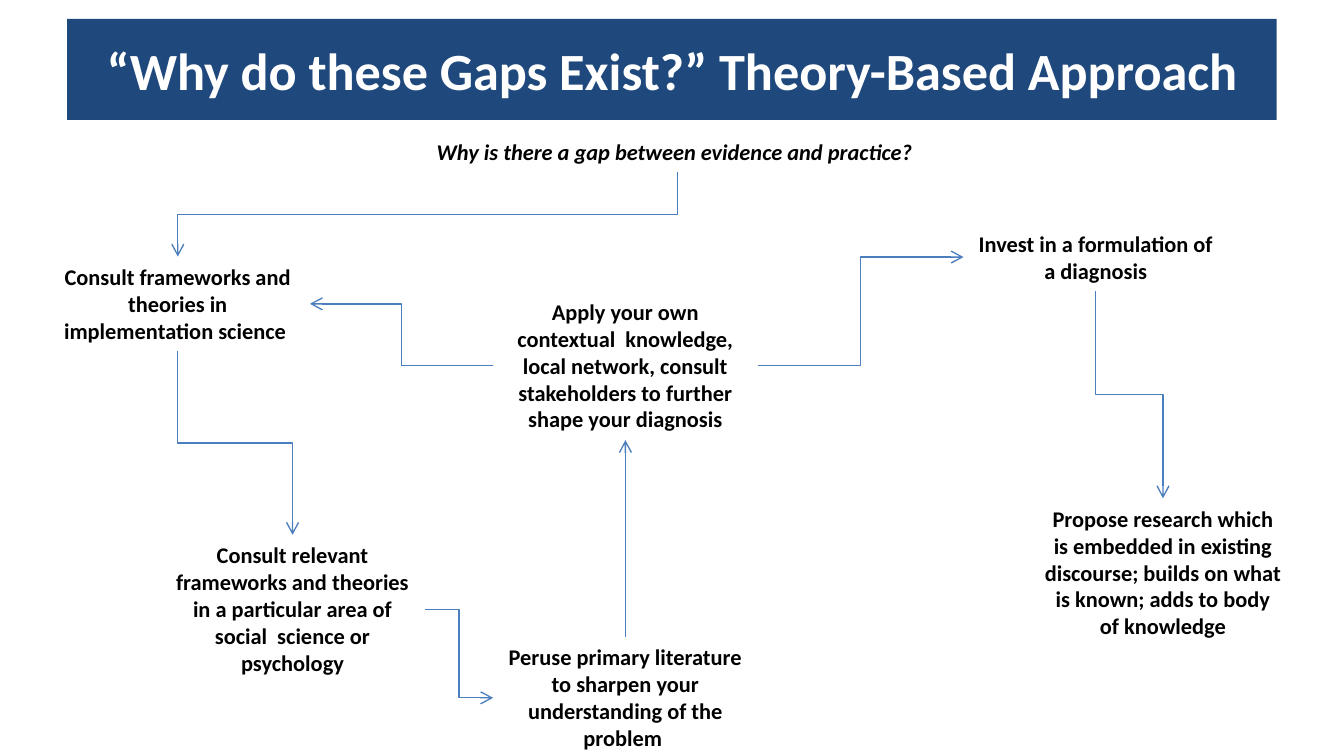
from dataclasses import dataclass

from lxml import etree
from pptx import Presentation
from pptx.dml.color import RGBColor
from pptx.enum.shapes import MSO_CONNECTOR, MSO_SHAPE
from pptx.enum.text import MSO_ANCHOR, MSO_AUTO_SIZE, PP_ALIGN
from pptx.oxml.ns import qn
from pptx.util import Cm, Pt

RECTANGLE = MSO_SHAPE.RECTANGLE
ELBOW, STRAIGHT = MSO_CONNECTOR.ELBOW, MSO_CONNECTOR.STRAIGHT
CENTER = PP_ALIGN.CENTER
MIDDLE, ANCHOR_TOP = MSO_ANCHOR.MIDDLE, MSO_ANCHOR.TOP
GROW = MSO_AUTO_SIZE.SHAPE_TO_FIT_TEXT
TOP, LEFT, BOTTOM, RIGHT = range(4)


@dataclass(frozen=True)
class Theme:
    font: str = "Calibri"
    navy: RGBColor = RGBColor(0x1F, 0x49, 0x7D)
    blue: RGBColor = RGBColor(0x4B, 0x7E, 0xBC)
    white: RGBColor = RGBColor(0xFF, 0xFF, 0xFF)
    black: RGBColor = RGBColor(0, 0, 0)
    title_size: Pt = Pt(28)
    body_size: Pt = Pt(12)
    line_width: Pt = Pt(0.75)


THEME = Theme()
STEP_WIDTH, LINE_HEIGHT, STEP_PADDING = 5.0, 0.51, 0.26

# name: (left, top, number of lines, text), in cm from the corner of the flow
STEPS = {
    "frameworks": (0, 2.36, 3, "Consult frameworks and theories in implementation science "),
    "relevant": (2.17, 7.62, 5, "Consult relevant frameworks and theories in a particular "
                                "area of social  science or psychology"),
    "apply": (8.46, 3.02, 5, "Apply your own contextual  knowledge, local network, "
                             "consult stakeholders to further shape your diagnosis"),
    "peruse": (8.46, 9.55, 4, "Peruse primary literature to sharpen your "
                              "understanding of the problem "),
    "propose": (18.62, 6.93, 5, "Propose research which is embedded in existing discourse; "
                                "builds on what is known; adds to body of knowledge"),
    "invest": (17.35, 1.73, 2, "Invest in a formulation of a diagnosis"),
}

ARROWS = [
    ("question", BOTTOM, "frameworks", TOP, ELBOW),
    ("frameworks", BOTTOM, "relevant", TOP, ELBOW),
    ("relevant", RIGHT, "peruse", LEFT, ELBOW),
    ("peruse", TOP, "apply", BOTTOM, STRAIGHT),
    ("apply", RIGHT, "invest", LEFT, ELBOW),
    ("invest", BOTTOM, "propose", TOP, ELBOW),
    ("apply", LEFT, "frameworks", RIGHT, ELBOW),
]


def write_text(sp, text, size=THEME.body_size, color=THEME.black,
               italic=False, anchor=ANCHOR_TOP, wrap=True):
    tf = sp.text_frame
    tf.word_wrap = wrap
    tf.vertical_anchor = anchor
    p = tf.paragraphs[0]
    p.alignment = CENTER
    r = p.add_run()
    r.text = text
    r.font.name, r.font.size = THEME.font, size
    r.font.bold, r.font.italic = True, italic
    r.font.color.rgb = color


def add_text_box(slide, left, top, width, height, text, **style):
    sp = slide.shapes.add_textbox(Cm(left), Cm(top), Cm(width), Cm(height))
    write_text(sp, text, **style)
    sp.text_frame.auto_size = GROW
    return sp


def turn_downwards(c):
    """Make an elbow leave its start downwards instead of sideways."""
    x1, y1, x2, y2 = c.begin_x, c.begin_y, c.end_x, c.end_y
    length, offset = abs(y2 - y1), abs(x2 - x1)
    c.left, c.top = (x1 + x2 - length) // 2, (y1 + y2 - offset) // 2
    c.width, c.height = length, offset
    xfrm = c._element.spPr.find(qn("a:xfrm"))
    for flip in ("flipH", "flipV"):
        xfrm.attrib.pop(flip, None)
    if x2 < x1:
        xfrm.set("rot", str(90 * 60000))
    else:
        xfrm.set("rot", str(270 * 60000))
        xfrm.set("flipH", "1")


def add_arrow(slide, start, start_side, end, end_side, kind):
    c = slide.shapes.add_connector(kind, 0, 0, 0, 0)
    c.begin_connect(start, start_side)
    c.end_connect(end, end_side)
    if kind == ELBOW and start_side == BOTTOM:
        turn_downwards(c)
    c.line.color.rgb = THEME.blue
    c.line.width = THEME.line_width
    etree.SubElement(c.line._get_or_add_ln(), qn("a:tailEnd"), type="arrow")
    etree.SubElement(c._element.spPr, qn("a:effectLst"))


def add_title(slide, left, top, width, height):
    sp = slide.shapes.add_shape(RECTANGLE, Cm(left), Cm(top), Cm(width), Cm(height))
    sp.shadow.inherit = False
    sp.fill.solid()
    sp.fill.fore_color.rgb = THEME.navy
    sp.line.fill.background()
    write_text(sp, "“Why do these Gaps Exist?” Theory-Based Approach",
               size=THEME.title_size, color=THEME.white, anchor=MIDDLE)


def add_flow(slide, left, top):
    """Place the question, the steps and the arrows between them."""
    boxes = {"question": add_text_box(
        slide, left + 7.09, top, 9.7, STEP_PADDING + LINE_HEIGHT,
        "Why is there a gap between evidence and practice? ",
        italic=True, wrap=False)}
    for name, (x, y, lines, text) in STEPS.items():
        boxes[name] = add_text_box(slide, left + x, top + y, STEP_WIDTH,
                                   STEP_PADDING + lines * LINE_HEIGHT, text)
    for start, start_side, end, end_side, kind in ARROWS:
        add_arrow(slide, boxes[start], start_side, boxes[end], end_side, kind)


def main():
    prs = Presentation()
    prs.slide_width, prs.slide_height = Cm(25.4), Cm(14.29)
    slide = prs.slides.add_slide(prs.slide_layouts[6])
    add_title(slide, 1.27, 0.36, 22.86, 1.91)
    add_flow(slide, 0.86, 2.49)
    prs.save("out.pptx")


if __name__ == "__main__":
    main()
